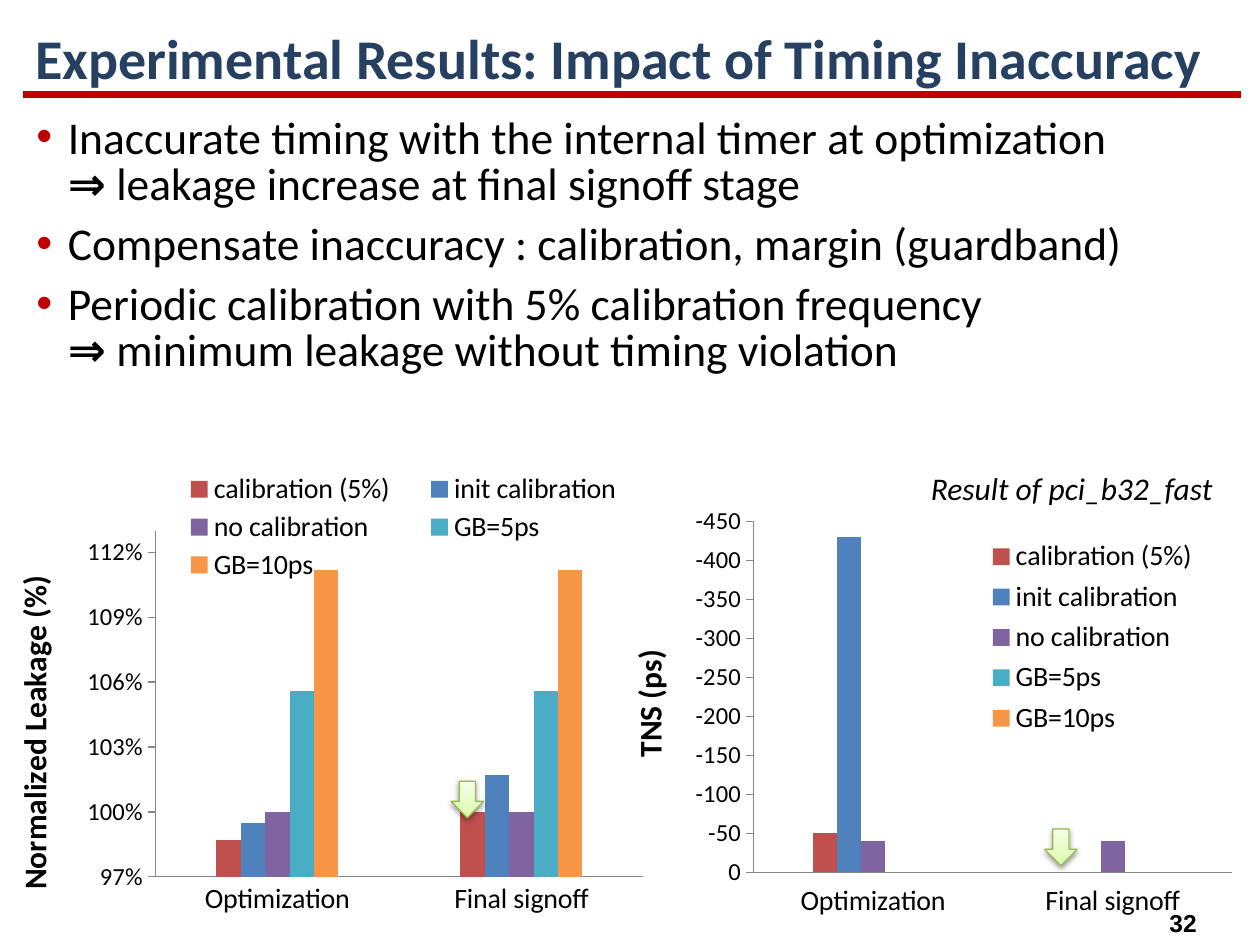
from typing import NamedTuple, Optional

from lxml.etree import SubElement
from pptx import Presentation
from pptx.chart.data import CategoryChartData
from pptx.dml.color import RGBColor
from pptx.enum.chart import XL_CHART_TYPE, XL_LEGEND_POSITION, XL_TICK_LABEL_POSITION, XL_TICK_MARK
from pptx.enum.shapes import MSO_CONNECTOR, MSO_SHAPE
from pptx.enum.text import MSO_ANCHOR, PP_ALIGN
from pptx.oxml import parse_xml
from pptx.oxml.ns import nsdecls, qn
from pptx.util import Inches, Pt

BLACK = RGBColor(0x00, 0x00, 0x00)
RED = RGBColor(0xC0, 0x00, 0x00)
NAVY = RGBColor(0x25, 0x40, 0x61)
AXIS_GRAY = RGBColor(0x86, 0x86, 0x86)
ARROW_GREEN = RGBColor(0x98, 0xB9, 0x55)
SERIES_COLORS = (
    RGBColor(0xC0, 0x50, 0x4D),
    RGBColor(0x4F, 0x81, 0xBD),
    RGBColor(0x80, 0x64, 0xA2),
    RGBColor(0x4B, 0xAC, 0xC6),
    RGBColor(0xF7, 0x96, 0x46),
)
SERIES_NAMES = ("calibration (5%)", "init calibration", "no calibration", "GB=5ps", "GB=10ps")
CATEGORIES = ("Optimization", "Final signoff")


class Box(NamedTuple):
    left: float
    top: float
    width: float
    height: float


class Bullet(NamedTuple):
    text: str
    consequence: str = ""


class ChartSpec(NamedTuple):
    box: Box
    axis_title: str
    title_position: tuple[float, float]
    plot: Box
    legend: Box
    values: tuple[tuple[float, float], ...]
    minimum: float
    maximum: float
    major_unit: float
    number_format: str
    reverse: bool = False


BULLETS = (
    Bullet("Inaccurate timing with the internal timer at optimization ",
           "leakage increase at final signoff stage"),
    Bullet("Compensate inaccuracy : calibration, margin (guardband)"),
    Bullet("Periodic calibration with 5% calibration frequency",
           "minimum leakage without timing violation"),
)
CHARTS = (
    ChartSpec(Box(0, 3.72, 5.25, 4.03), "Normalized Leakage (%)", (0.01, 0.2),
              Box(0.235, 0.122, 0.738, 0.682), Box(0.24, 0, 0.74, 0.23),
              ((0.987, 1), (0.995, 1.017), (1, 1), (1.056, 1.056), (1.112, 1.112)),
              0.97, 1.13, 0.03, "0%"),
    ChartSpec(Box(4.78, 3.94, 5.22, 3.67), "TNS (ps)", (0.03, 0.32),
              Box(0.23, 0.054, 0.728, 0.759), Box(0.56, 0.08, 0.37, 0.45),
              ((-50, 0), (-430, 0), (-40, -40), (0, 0), (0, 0)),
              -450, 0, 50, "0", True),
)
ARROWS = (Box(3.58, 6.2, 0.26, 0.29), Box(8.29, 6.58, 0.26, 0.29))


def inches(box: Box) -> list[int]:
    return [Inches(length) for length in box]


def style_font(font, size: float, color: RGBColor = BLACK, bold: bool = False,
               italic: bool = False, name: str = "Calibri") -> None:
    font.name, font.size, font.bold, font.italic = name, Pt(size), bold, italic
    font.color.rgb = color


def add_text(slide, box: Box, text: str, size: float, wrap: bool = False,
             alignment: Optional[PP_ALIGN] = None, **font_style):
    text_frame = slide.shapes.add_textbox(*inches(box)).text_frame
    text_frame.word_wrap = wrap
    text_frame.text = text
    paragraph = text_frame.paragraphs[0]
    paragraph.alignment = alignment
    for run in paragraph.runs:
        style_font(run.font, size, **font_style)
    return text_frame


def add_bullets(slide, box: Box) -> None:
    text_frame = slide.shapes.add_textbox(*inches(box)).text_frame
    text_frame.word_wrap = True
    for index, bullet in enumerate(BULLETS):
        paragraph = text_frame.paragraphs[0] if index == 0 else text_frame.add_paragraph()
        paragraph.text = bullet.text
        paragraph.line_spacing = 0.85
        paragraph.space_before = Pt(7.8)
        if bullet.consequence:
            paragraph.add_line_break()
            paragraph.add_run().text = "⇒"
            paragraph.add_run().text = f" {bullet.consequence}"
        for run in paragraph.runs:
            style_font(run.font, 26, bold=run.text == "⇒")
        properties = paragraph._p.get_or_add_pPr()
        properties.set("marL", str(Inches(0.25)))
        properties.set("indent", str(Inches(-0.25)))
        color = SubElement(properties, qn("a:buClr"))
        SubElement(color, qn("a:srgbClr"), val=str(RED))
        SubElement(properties, qn("a:buFont"), typeface="Arial")
        SubElement(properties, qn("a:buChar"), char="•")


def set_layout(element, position: tuple[float, ...], predecessor: str = "", inner: bool = False) -> None:
    for existing in element.findall(qn("c:layout")):
        element.remove(existing)
    parts = ['<c:layoutTarget val="inner"/>'] if inner else []
    parts += [f'<c:{axis}Mode val="edge"/>' for axis in "xy"]
    parts += [f'<c:{key} val="{value}"/>' for key, value in zip("xywh", position)]
    layout = parse_xml(f'<c:layout {nsdecls("c")}><c:manualLayout>{"".join(parts)}'
                       "</c:manualLayout></c:layout>")
    if predecessor:
        element.find(qn(predecessor)).addnext(layout)
    else:
        element.insert(0, layout)


def add_column_chart(slide, spec: ChartSpec) -> None:
    data = CategoryChartData(number_format=spec.number_format)
    data.categories = CATEGORIES
    for name, values in zip(SERIES_NAMES, spec.values):
        data.add_series(name, values)
    chart = slide.shapes.add_chart(XL_CHART_TYPE.COLUMN_CLUSTERED, *inches(spec.box), data).chart
    style_font(chart.font, 18)
    chart.has_title = False
    plot = chart.plots[0]
    plot.gap_width, plot.overlap, plot.vary_by_categories = 500, 0, False
    for series, color in zip(plot.series, SERIES_COLORS):
        series.format.fill.solid()
        series.format.fill.fore_color.rgb = color
        series.invert_if_negative = False

    category_axis, value_axis = chart.category_axis, chart.value_axis
    for axis, size, tick_mark in ((category_axis, 16, XL_TICK_MARK.NONE),
                                  (value_axis, 14, XL_TICK_MARK.OUTSIDE)):
        style_font(axis.tick_labels.font, size)
        axis.major_tick_mark, axis.minor_tick_mark = tick_mark, XL_TICK_MARK.NONE
        axis.has_major_gridlines = False
        axis.format.line.color.rgb = AXIS_GRAY
        axis.format.line.width = Pt(0.75)
    value_axis.minimum_scale, value_axis.maximum_scale = spec.minimum, spec.maximum
    value_axis.major_unit = spec.major_unit
    value_axis.reverse_order = spec.reverse
    value_axis.tick_labels.number_format = spec.number_format
    value_axis.tick_labels.number_format_is_linked = False
    if spec.reverse:
        category_axis.tick_label_position = XL_TICK_LABEL_POSITION.HIGH
    title = value_axis.axis_title
    title.text_frame.text = spec.axis_title
    style_font(title.text_frame.paragraphs[0].runs[0].font, 18, bold=True)
    set_layout(title._element, spec.title_position, "c:tx")

    chart.has_legend = True
    chart.legend.position = XL_LEGEND_POSITION.RIGHT
    chart.legend.include_in_layout = False
    style_font(chart.legend.font, 16)
    set_layout(chart.legend._element, spec.legend, "c:legendPos")
    set_layout(chart._chartSpace.chart.plotArea, spec.plot, inner=True)


def add_down_arrow(slide, box: Box) -> None:
    shape = slide.shapes.add_shape(MSO_SHAPE.DOWN_ARROW, *inches(box))
    shape.line.color.rgb = ARROW_GREEN
    shape.line.width = Pt(0.75)
    stops = "".join(f'<a:gs pos="{percent * 1000}"><a:srgbClr val="{color}"/></a:gs>'
                    for percent, color in ((0, "DAFDA7"), (35, "E4FCC2"), (100, "F5FFE7")))
    properties = shape._element.spPr
    properties.find(qn("a:prstGeom")).addnext(parse_xml(
        f'<a:gradFill {nsdecls("a")}><a:gsLst>{stops}</a:gsLst><a:lin ang="16200000"/></a:gradFill>'))
    properties.append(parse_xml(
        f'<a:effectLst {nsdecls("a")}><a:outerShdw blurRad="{Pt(3.1)}" dist="{Pt(1.6)}" dir="5400000">'
        '<a:srgbClr val="000000"><a:alpha val="38000"/></a:srgbClr></a:outerShdw></a:effectLst>'))


def main() -> None:
    presentation = Presentation()
    presentation.slide_width, presentation.slide_height = Inches(10), Inches(7.5)
    slide = presentation.slides.add_slide(presentation.slide_layouts[6])
    rule = slide.shapes.add_connector(MSO_CONNECTOR.STRAIGHT, *inches(Box(0.18, 0.75, 9.85, 0.75)))
    rule.line.color.rgb = RED
    rule.line.width = Pt(4.5)
    SubElement(rule._element.spPr, qn("a:effectLst"))
    add_text(slide, Box(9.17, 7.16, 0.44, 0.34), "32", 14,
             alignment=PP_ALIGN.CENTER, bold=True, name="Arial")
    add_bullets(slide, Box(0.19, 0.88, 9.66, 6.28))
    title = add_text(slide, Box(0.18, 0.16, 9.68, 0.65),
                     "Experimental Results: Impact of Timing Inaccuracy", 32,
                     wrap=True, color=NAVY, bold=True)
    title.vertical_anchor = MSO_ANCHOR.MIDDLE
    title.paragraphs[0].line_spacing = 0.9
    for spec in CHARTS:
        add_column_chart(slide, spec)
    add_text(slide, Box(7.29, 3.67, 2.46, 0.4), "Result of pci_b32_fast", 18, italic=True)
    for box in ARROWS:
        add_down_arrow(slide, box)
    presentation.save("out.pptx")


if __name__ == "__main__":
    main()
